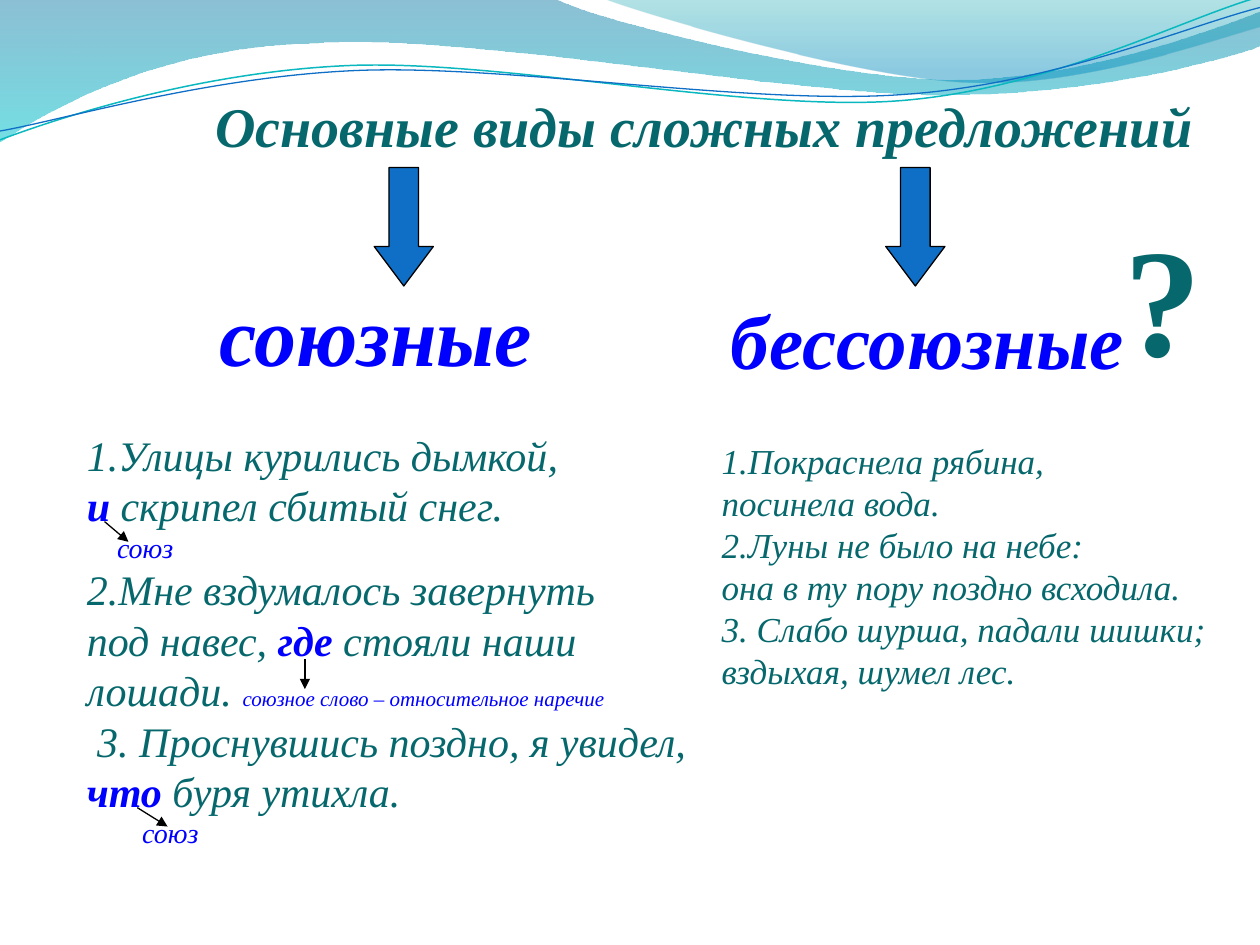
from math import cos, radians, sin

from pptx import Presentation
from pptx.dml.color import RGBColor
from pptx.enum.shapes import MSO_CONNECTOR, MSO_SHAPE
from pptx.enum.text import MSO_AUTO_SIZE
from pptx.oxml.ns import qn
from pptx.util import Inches, Pt
from lxml import etree

STRAIGHT = MSO_CONNECTOR.STRAIGHT
DOWN_ARROW = MSO_SHAPE.DOWN_ARROW
GROW = MSO_AUTO_SIZE.SHAPE_TO_FIT_TEXT
FONT = "Times New Roman"
TILT = 2.7
COLORS = {
    "teal": "06686C", "blue": "0000FF", "arrow": "0F6FC6", "black": "000000",
    "aqua": "0AB8BF", "wave_top": "0074A1", "wave_bottom": "00C6CF",
    "crest_top": "00A1A9", "crest_bottom": "008BBF",
}

WAVE = [
    (0, 0), (4.4, -0.01), (4.76, 0.17, 6.64, 0.63, 7.58, 0.63),
    (8.53, 0.63, 9.58, 0.26, 10, 0.09), (10.01, 0.36),
    (9.83, 0.44, 8.7, 0.76, 7.46, 0.75), (6.22, 0.75, 3.82, 0.28, 2.57, 0.34),
    (1.29, 0.36, 0.46, 0.83, -0.01, 1.13), (0, 0),
]
CREST = [
    (4.79, -0.01), (5.09, 0.11, 6.82, 0.62, 7.69, 0.65),
    (8.56, 0.69, 9.61, 0.32, 10, 0.21), (10, 0), (4.79, -0.01),
]
AQUA_LINE = [
    (0, 1.11), (0.48, 0.93, 1.58, 0.57, 2.77, 0.52),
    (3.95, 0.47, 5.93, 0.89, 7.13, 0.8), (8.33, 0.71, 9.38, 0.15, 9.98, -0.02),
]
BLUE_LINE = [
    (0, 1.04), (0.47, 0.96, 1.64, 0.61, 2.83, 0.56),
    (4.03, 0.51, 5.97, 0.84, 7.17, 0.75), (8.36, 0.67, 9.41, 0.21, 10, 0.06),
]

TITLE = {"size": 32, "bold": True, "italic": True}
MARK = {"size": 88, "bold": True}
LINKED = {"size": 48, "bold": True, "italic": True, "color": "blue"}
UNLINKED = {**LINKED, "size": 44}
BODY = {"size": 24, "italic": True}
KEY = {**BODY, "bold": True, "color": "blue"}
NOTE = {"size": 16, "italic": True, "color": "blue"}
SMALL_NOTE = {**NOTE, "size": 12}
EXAMPLE = {"size": 20, "italic": True}

LINKED_EXAMPLES = [
    (0, [("1.Улицы курились дымкой,", BODY)]),
    (0, [("и", KEY), (" скрипел сбитый снег.", BODY)]),
    (0.24, [("союз", NOTE)]),
    (0, [("2.Мне вздумалось завернуть", BODY)]),
    (0, [("под навес, ", BODY), ("где ", KEY), ("стояли наши", BODY)]),
    (0, [("лошади. ", BODY), ("союзное слово – относительное наречие", SMALL_NOTE)]),
    (0, [(" 3. Проснувшись поздно, я увидел,", BODY)]),
    (0, [("что ", KEY), ("буря утихла.", BODY)]),
    (0.44, [("союз", NOTE)]),
]
UNLINKED_EXAMPLES = [
    "1.Покраснела рябина,", "посинела вода.",
    "2.Луны не было на небе:", "она в ту пору поздно всходила.",
    "3. Слабо шурша, падали шишки;", "вздыхая, шумел лес.",
]


def rgb(name):
    """Return the named colour."""
    return RGBColor.from_string(COLORS[name])


def level(point, center):
    """Turn a point clockwise about the center by the tilt of the curves."""
    dx, dy = point[0] - center[0], point[1] - center[1]
    c, n = cos(radians(TILT)), sin(radians(TILT))
    return center[0] + dx * c - dy * n, center[1] + dx * n + dy * c


def add_outline(s, outline, close, center=None):
    """Add a freeform of straight and cubic segments without shadow."""
    nodes = [seg[i:i + 2] for seg in outline for i in range(0, len(seg), 2)]
    if center:
        nodes = [level(node, center) for node in nodes]
    start, *rest = [(Inches(x), Inches(y)) for x, y in nodes]
    builder = s.shapes.build_freeform(*start, scale=1.0)
    builder.add_line_segments(rest, close=close)
    sp = builder.convert_to_shape()
    sp.shadow.inherit = False
    lines = iter(list(sp._element.spPr.iter(qn("a:lnTo"))))
    for seg in outline[1:]:
        line = next(lines)
        if len(seg) == 6:
            curve = etree.Element(qn("a:cubicBezTo"))
            line.addprevious(curve)
            for part in (line, next(lines), next(lines)):
                curve.append(part[0])
                part.getparent().remove(part)
    return sp


def add_wave(s, outline, stops):
    """Add a closed wave with a translucent vertical gradient."""
    sp = add_outline(s, outline, True)
    sp.line.fill.background()
    sp.fill.gradient()
    sp.fill.gradient_angle = 270
    for stop, (position, color, _) in zip(sp.fill.gradient_stops, stops):
        stop.position = position
        stop.color.rgb = rgb(color)
    colors = sp._element.spPr.iter(qn("a:srgbClr"))
    for clr, (_, _, opacity) in zip(list(colors), stops):
        etree.SubElement(clr, qn("a:alpha")).set("val", str(opacity * 1000))


def add_curve(s, outline, center, color, width):
    """Add an open, slightly tilted curved line."""
    sp = add_outline(s, outline, False, center)
    sp.rotation = 360 - TILT
    sp.fill.background()
    sp.line.color.rgb = rgb(color)
    sp.line.width = Pt(width)


def add_text(s, box, paragraphs, wrap=False):
    """Add a text box from (indent, runs) paragraphs."""
    tf = s.shapes.add_textbox(*map(Inches, box)).text_frame
    tf.word_wrap = wrap
    tf.auto_size = GROW
    for i, (indent, runs) in enumerate(paragraphs):
        p = tf.add_paragraph() if i else tf.paragraphs[0]
        if indent:
            p._p.get_or_add_pPr().set("marL", str(Inches(indent)))
        for text, style in runs:
            r = p.add_run()
            r.text = text
            r.font.color.rgb = rgb(style.get("color", "teal"))
            values = {"name": FONT, "size": Pt(style["size"]),
                      "bold": style.get("bold", False), "italic": style.get("italic", False)}
            for name, value in values.items():
                setattr(r.font, name, value)


def add_down_arrow(s, left):
    """Add a block arrow from the title to a sentence type."""
    sp = s.shapes.add_shape(DOWN_ARROW, *map(Inches, (left, 1.33, 0.47, 0.94)))
    sp.shadow.inherit = False
    sp.adjustments[0], sp.adjustments[1] = 0.5, 0.667
    sp.fill.solid()
    sp.fill.fore_color.rgb = rgb("arrow")
    sp.line.color.rgb = rgb("black")
    sp.line.width = Pt(0.75)


def add_pointer(s, ends):
    """Add a thin arrow from a linking word to its note."""
    cn = s.shapes.add_connector(STRAIGHT, *map(Inches, ends))
    cn.line.color.rgb = rgb("black")
    cn.line.width = Pt(0.75)
    etree.SubElement(cn.line._get_or_add_ln(), qn("a:tailEnd")).set("type", "triangle")
    etree.SubElement(cn._element.spPr, qn("a:effectLst"))


def main():
    """Build the slide on the main kinds of complex sentences."""
    prs = Presentation()
    prs.slide_width, prs.slide_height = Inches(10), Inches(7.5)
    s = prs.slides.add_slide(prs.slide_layouts[6])
    add_wave(s, WAVE, [(0, "wave_top", 45), (1, "wave_bottom", 55)])
    add_wave(s, CREST, [(0, "crest_top", 30), (0.8, "crest_bottom", 45)])
    add_curve(s, AQUA_LINE, (4.99, 0.58), "aqua", 0.85)
    add_curve(s, BLUE_LINE, (5, 0.59), "arrow", 0.75)
    add_text(s, (1.61, 0.68, 8.21, 1.18), [(0, [("Основные виды сложных предложений", TITLE)])])
    add_text(s, (8.83, 1.56, 0.7, 1.58), [(0, [("?", MARK)])], wrap=True)
    add_text(s, (1.64, 2.19, 2.97, 0.91), [(0, [("союзные", LINKED)])], wrap=True)
    add_text(s, (5.7, 2.27, 3.35, 0.84), [(0, [("бессоюзные", UNLINKED)])])
    for left in (2.97, 7.03):
        add_down_arrow(s, left)
    add_text(s, (0.59, 3.36, 5.09, 3.47), LINKED_EXAMPLES)
    for ends in ((0.83, 4.14, 1.02, 4.3), (2.42, 5.23, 2.42, 5.47), (1.09, 6.41, 1.33, 6.56)):
        add_pointer(s, ends)
    add_text(s, (5.63, 3.44, 4.07, 2.12), [(0, [(t, EXAMPLE)]) for t in UNLINKED_EXAMPLES])
    prs.save("out.pptx")


if __name__ == "__main__":
    main()
